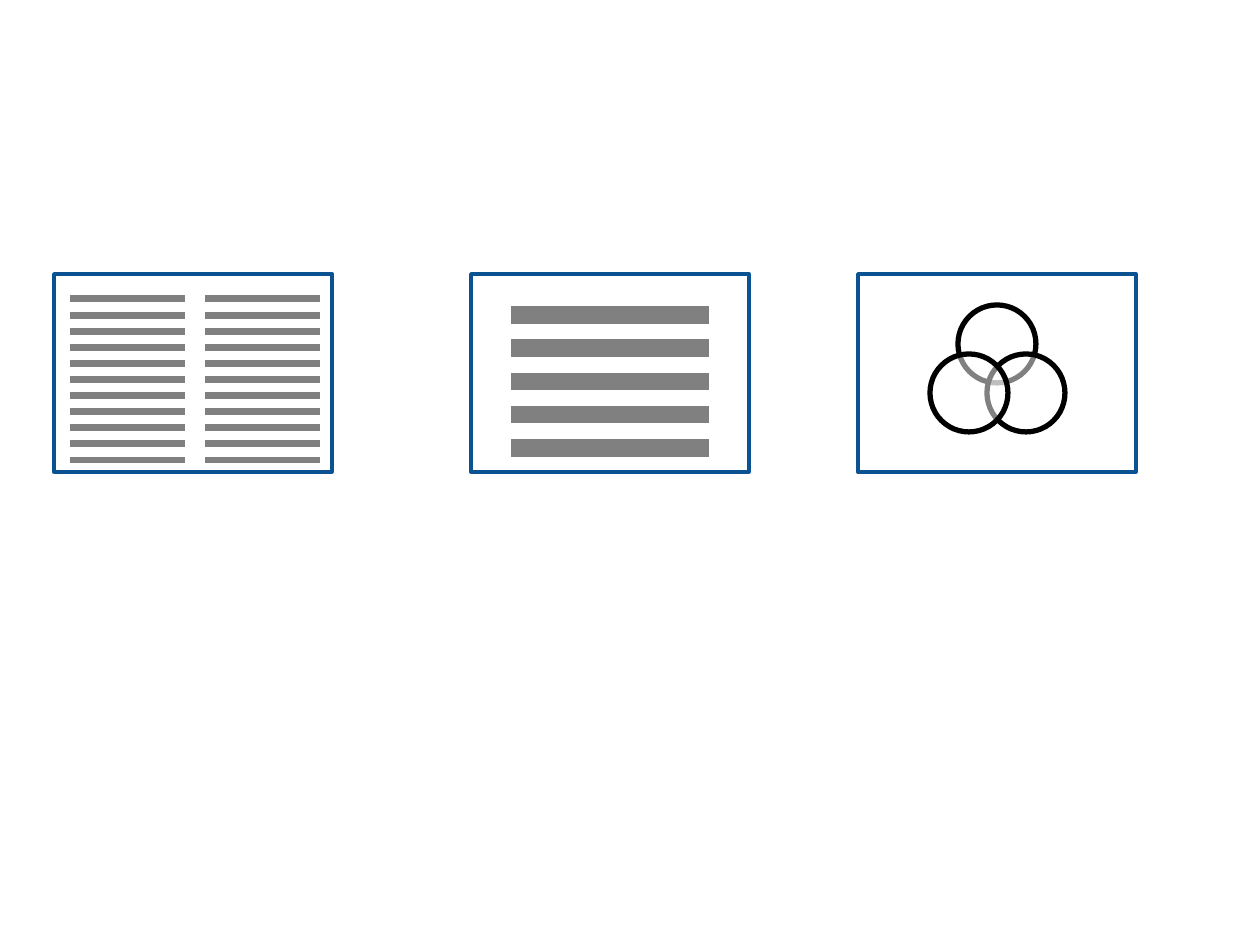
"""Build a slide with three framed thumbnails: two columns, one column and a Venn diagram."""
from lxml import etree
from pptx import Presentation
from pptx import util as u
from pptx.dml.color import RGBColor
from pptx.enum import shapes
from pptx.oxml import ns

PX = 914400 / 126
FRAME_TOP, FRAME_WIDTH, FRAME_HEIGHT = 274, 278, 198
CIRCLE_SIZE = 78


def outline(part, color, points):
    part.line.color.rgb = RGBColor.from_string(color)
    part.line.width = u.Pt(points)


def add_outlined(parent, preset, left, top, width, height, color, points):
    part = parent.add_shape(preset, *(u.Emu(round(n * PX)) for n in (left, top, width, height)))
    part.shadow.inherit = False
    part.fill.background()
    outline(part, color, points)
    return part


prs = Presentation()
prs.slide_width, prs.slide_height = u.Inches(10), u.Inches(7.5)
slide = prs.slides.add_slide(prs.slide_layouts[6])
two_column = slide.shapes.add_group_shape().shapes
one_column = slide.shapes.add_group_shape().shapes

for thumbnail, frame_left in ((two_column, 54), (one_column, 471), (slide.shapes, 858)):
    add_outlined(thumbnail, shapes.MSO_SHAPE.RECTANGLE, frame_left, FRAME_TOP,
                 FRAME_WIDTH, FRAME_HEIGHT, "0B5292", 2)

text_columns = (
    (two_column, 70, 185, 299, 460, 11, 4),
    (two_column, 205, 320, 299, 460, 11, 4),
    (one_column, 511, 709, 315, 448, 5, 10),
)
for thumbnail, left, right, first, last, count, points in text_columns:
    for row in range(count):
        y = first + (last - first) * row / (count - 1)
        ends = (u.Emu(round(n * PX)) for n in (left, y, right, y))
        text_line = thumbnail.add_connector(shapes.MSO_CONNECTOR.STRAIGHT, *ends)
        outline(text_line, "808080", points)
        etree.SubElement(text_line._element.spPr, ns.qn("a:effectLst"))

venn = slide.shapes.add_group_shape().shapes
for left, top in ((958, 305), (987, 354), (930, 354)):
    circle = add_outlined(venn, shapes.MSO_SHAPE.OVAL, left, top,
                          CIRCLE_SIZE, CIRCLE_SIZE, "000000", 3)
    circle.fill.solid()
    circle.fill.fore_color.rgb = RGBColor.from_string("FFFFFF")
    fill_color = circle._element.spPr.find(ns.qn("a:solidFill"))[0]
    etree.SubElement(fill_color, ns.qn("a:alpha"), val="50000")

prs.save("out.pptx")
